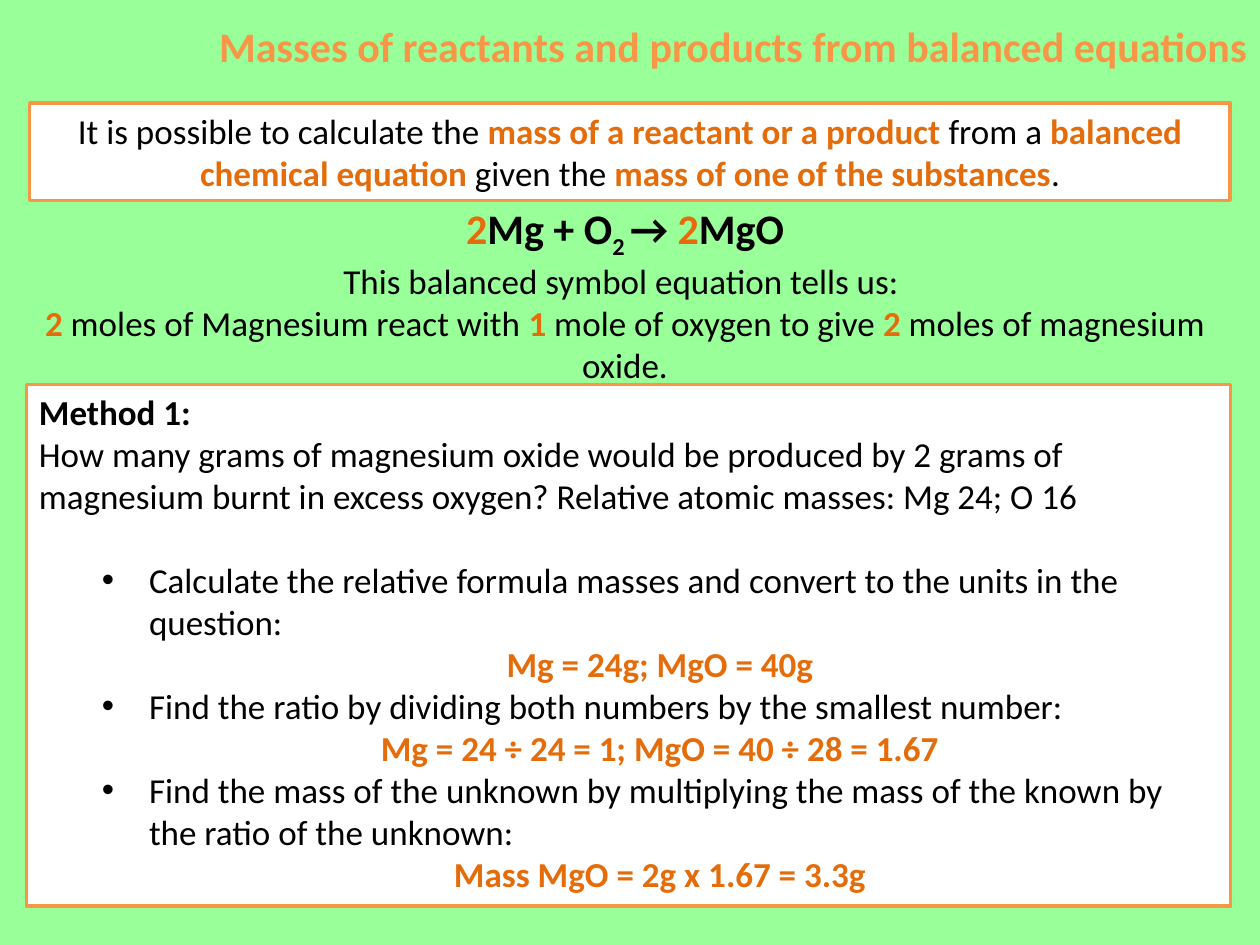
from lxml import etree
from pptx import Presentation
from pptx.dml.color import RGBColor
from pptx.enum.shapes import MSO_SHAPE
from pptx.enum.text import MSO_ANCHOR, MSO_AUTO_SIZE, PP_ALIGN
from pptx.oxml.ns import qn
from pptx.util import Cm, Pt

LEFT, CENTER, RIGHT = PP_ALIGN.LEFT, PP_ALIGN.CENTER, PP_ALIGN.RIGHT
TOP, MIDDLE = MSO_ANCHOR.TOP, MSO_ANCHOR.MIDDLE
NO_AUTOSIZE = MSO_AUTO_SIZE.NONE
RECTANGLE = MSO_SHAPE.RECTANGLE

FONT = "Calibri"
COLORS = {
    "background": "99FF99",
    "panel": "FFFFFF",
    "accent": "F79646",
    "key": "E46C0A",
    "text": "000000",
}
KEY = {"color": "key", "bold": True}


def rgb(name):
    return RGBColor.from_string(COLORS[name])


def add_run(paragraph, text, size=20, color="text", bold=False, baseline=None):
    run = paragraph.add_run()
    run.text = text
    font = run.font
    font.name, font.size, font.bold = FONT, Pt(size), bold
    font.color.rgb = rgb(color)
    if baseline is not None:
        run._r.get_or_add_rPr().set("baseline", str(baseline * 1000))


def add_paragraph(frame, *spans, align=LEFT, margin=0, hanging=0, bullet=None,
                  before=0):
    """Fill the next paragraph with spans, each a (text, run format) pair."""
    paragraph = frame.paragraphs[0]
    if paragraph.runs:
        paragraph = frame.add_paragraph()
    properties = paragraph._p.get_or_add_pPr()
    properties.set("marL", str(Cm(margin)))
    properties.set("indent", str(-Cm(hanging)))
    if bullet:
        etree.SubElement(properties, qn("a:buFont")).set("typeface", "Arial")
        etree.SubElement(properties, qn("a:buChar")).set("char", bullet)
    else:
        etree.SubElement(properties, qn("a:buNone"))
    paragraph.alignment = align
    paragraph.space_before = Pt(before)
    for text, style in spans:
        add_run(paragraph, text, **style)


def place(shape, box):
    shape.left, shape.top, shape.width, shape.height = (Cm(v) for v in box)


def prepare_frame(shape, anchor=TOP):
    frame = shape.text_frame
    frame.word_wrap = True
    frame.auto_size = NO_AUTOSIZE
    frame.vertical_anchor = anchor
    return frame


def style_panel(shape):
    shape.fill.solid()
    shape.fill.fore_color.rgb = rgb("panel")
    shape.line.color.rgb = rgb("accent")
    shape.line.width = Pt(2)


def build_title(slide, box):
    title = slide.shapes.title
    place(title, box)
    heading = "Masses of reactants and products from balanced equations"
    add_paragraph(prepare_frame(title, MIDDLE),
                  (heading, {"size": 24, "color": "accent", "bold": True}),
                  align=RIGHT)


def build_summary(slide, box):
    summary = slide.shapes.add_shape(RECTANGLE, *(Cm(v) for v in box))
    summary.shadow.inherit = False
    style_panel(summary)
    add_paragraph(
        prepare_frame(summary),
        ("It is possible to calculate the ", {}),
        ("mass of a reactant or a product ", KEY),
        ("from a ", {}),
        ("balanced chemical equation", KEY),
        (" given the ", {}),
        ("mass of one of the substances", KEY),
        (".", {}),
        align=CENTER)


def build_equation(slide, box):
    equation = slide.shapes.add_textbox(*(Cm(v) for v in box))
    frame = prepare_frame(equation)
    formula = {"size": 24, "bold": True}
    coefficient = {**formula, "color": "key"}
    add_paragraph(
        frame,
        ("2", coefficient),
        ("Mg + O", formula),
        ("2 ", {**formula, "baseline": -25}),
        ("→ ", formula),
        ("2", coefficient),
        ("MgO", formula),
        align=CENTER)
    add_paragraph(frame, ("This balanced symbol equation tells us: ", {}),
                  align=CENTER)
    add_paragraph(
        frame,
        ("2", KEY),
        (" moles of Magnesium react with ", {}),
        ("1", KEY),
        (" mole of oxygen to give ", {}),
        ("2", KEY),
        (" moles of magnesium oxide.", {}),
        align=CENTER)


def build_method(slide, box):
    method = slide.placeholders[1]
    place(method, box)
    style_panel(method)
    frame = prepare_frame(method)
    question = ("How many grams of magnesium oxide would be produced by 2 grams "
                "of magnesium burnt in excess oxygen? Relative atomic masses: "
                "Mg 24; O 16")
    steps = [
        ("Calculate the relative formula masses and convert to the units in "
         "the question:", "Mg = 24g; MgO = 40g"),
        ("Find the ratio by dividing both numbers by the smallest number:",
         "Mg = 24 ÷ 24 = 1; MgO = 40 ÷ 28 = 1.67"),
        ("Find the mass of the unknown by multiplying the mass of the known "
         "by the ratio of the unknown:", "Mass MgO = 2g x 1.67 = 3.3g"),
    ]
    add_paragraph(frame, ("Method 1:", {"bold": True}))
    add_paragraph(frame, (question, {}))
    for number, (instruction, working) in enumerate(steps):
        add_paragraph(frame, (instruction, {}), margin=2.22, hanging=0.95,
                      bullet="•", before=0 if number else 24)
        add_paragraph(frame, (working, KEY), align=CENTER, margin=1.27)


def main():
    presentation = Presentation()
    presentation.slide_width, presentation.slide_height = Cm(25.4), Cm(19.05)
    slide = presentation.slides.add_slide(presentation.slide_layouts[1])
    slide.background.fill.solid()
    slide.background.fill.fore_color.rgb = rgb("background")

    build_title(slide, (1.7, 0, 23.7, 1.83))
    build_summary(slide, (0.6, 2.08, 24.2, 1.96))
    build_equation(slide, (0.5, 3.96, 24.2, 3.84))
    build_method(slide, (0.53, 7.75, 24.28, 10.52))
    presentation.save("out.pptx")


if __name__ == "__main__":
    main()
